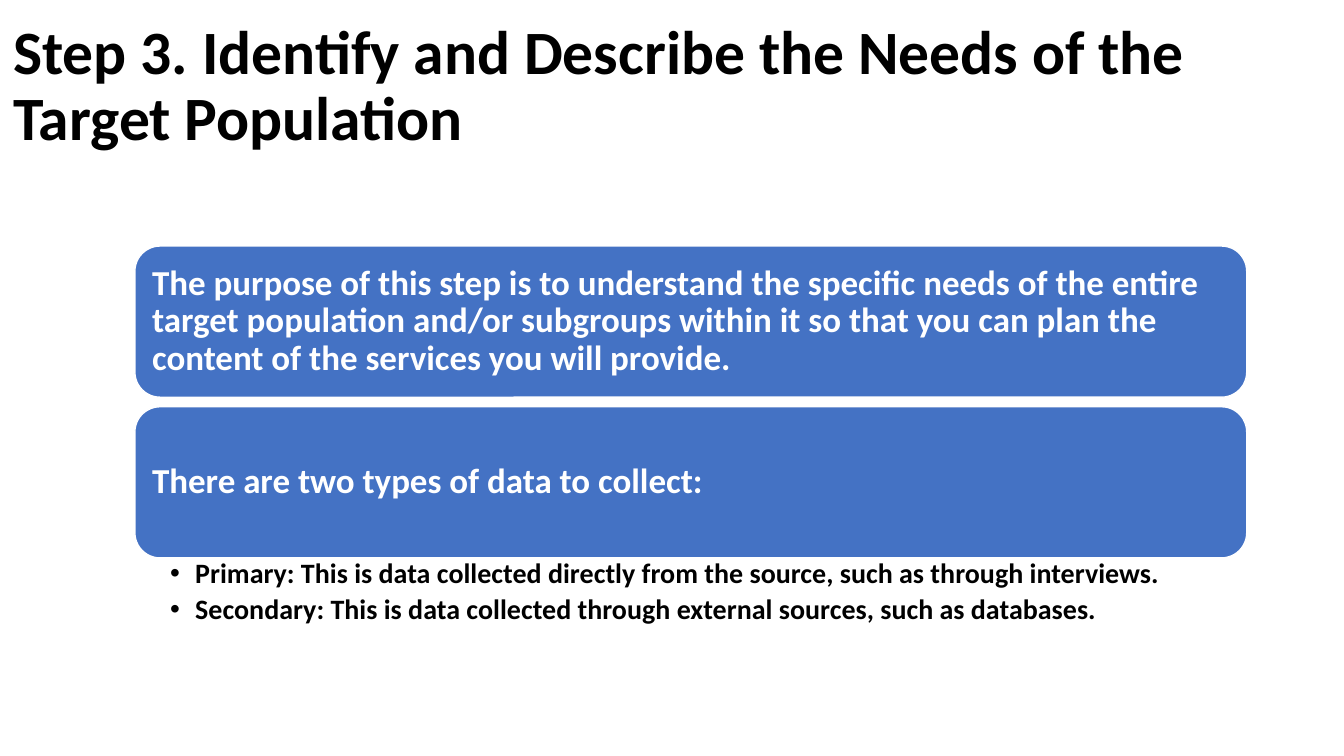
from dataclasses import dataclass

from pptx import Presentation
from pptx import util as u
from pptx.dml.color import RGBColor
from pptx.enum import shapes, text

FONT = "Calibri"
BLACK = RGBColor(0x00, 0x00, 0x00)
WHITE = RGBColor(0xFF, 0xFF, 0xFF)
BLUE = RGBColor(0x44, 0x72, 0xC4)

LEFT, WIDTH = 3.4, 28.02
BOX_TOP, BOX_HEIGHT, BOX_STEP = 6.2, 3.81, 4.05


@dataclass
class Box:
    statement: str
    top: float


STATEMENTS = [
    "The purpose of this step is to understand the specific needs of the entire "
    "target population and/or subgroups within it so that you can plan the "
    "content of the services you will provide.",
    "There are two types of data to collect:",
]
BOXES = [Box(s, BOX_TOP + i * BOX_STEP) for i, s in enumerate(STATEMENTS)]

DATA_TYPES = [
    "Primary: This is data collected directly from the source, such as through interviews.",
    "Secondary: This is data collected through external sources, such as databases.",
]


def place(sp, left: float, top: float, width: float, height: float) -> None:
    sp.left, sp.top = u.Cm(left), u.Cm(top)
    sp.width, sp.height = u.Cm(width), u.Cm(height)


def write(tf, lines: list[str], *, size: float, color: RGBColor,
          anchor=text.MSO_ANCHOR.MIDDLE, insets=(0.25, 0.13, 0.25, 0.13),
          after: float = 0, hanging: float = 0) -> None:
    tf.word_wrap = True
    tf.auto_size = text.MSO_AUTO_SIZE.NONE
    tf.vertical_anchor = anchor
    tf.margin_left, tf.margin_top, tf.margin_right, tf.margin_bottom = map(u.Cm, insets)
    for i, line in enumerate(lines):
        p = tf.add_paragraph() if i else tf.paragraphs[0]
        p.alignment = text.PP_ALIGN.LEFT
        p.line_spacing = 0.9
        p.space_before, p.space_after = u.Pt(0), u.Pt(after)
        if hanging:
            pPr = p._p.get_or_add_pPr()
            pPr.set("marL", str(u.Cm(hanging)))
            pPr.set("indent", str(-u.Cm(hanging)))
        r = p.add_run()
        r.text = line
        r.font.name, r.font.size, r.font.bold = FONT, u.Pt(size), True
        r.font.color.rgb = color


def draw_box(s, box: Box) -> None:
    sp = s.shapes.add_shape(shapes.MSO_SHAPE.ROUNDED_RECTANGLE, u.Cm(LEFT), u.Cm(box.top),
                            u.Cm(WIDTH), u.Cm(BOX_HEIGHT))
    sp.shadow.inherit = False
    sp.fill.solid()
    sp.fill.fore_color.rgb = BLUE
    sp.line.color.rgb = WHITE
    sp.line.width = u.Pt(1)
    write(sp.text_frame, [box.statement], size=25, color=WHITE,
          insets=(0.25, 0.25, 0.25, 0.25))


def main() -> None:
    prs = Presentation()
    prs.slide_width, prs.slide_height = u.Cm(33.87), u.Cm(19.05)
    s = prs.slides.add_slide(prs.slide_layouts[1])

    title = s.shapes.title
    place(title, 0.08, 0, 31.32, 4.42)
    write(title.text_frame,
          ["Step 3. Identify and Describe the Needs of the Target Population"],
          size=44, color=BLACK)

    for box in BOXES:
        draw_box(s, box)

    body = s.placeholders[1]
    place(body, LEFT, 14.02, WIDTH, 1.91)
    write(body.text_frame, DATA_TYPES, size=20, color=BLACK, anchor=text.MSO_ANCHOR.TOP,
          insets=(0.89, 0.08, 0.48, 0.08), after=4, hanging=0.63)

    prs.save("out.pptx")


if __name__ == "__main__":
    main()
